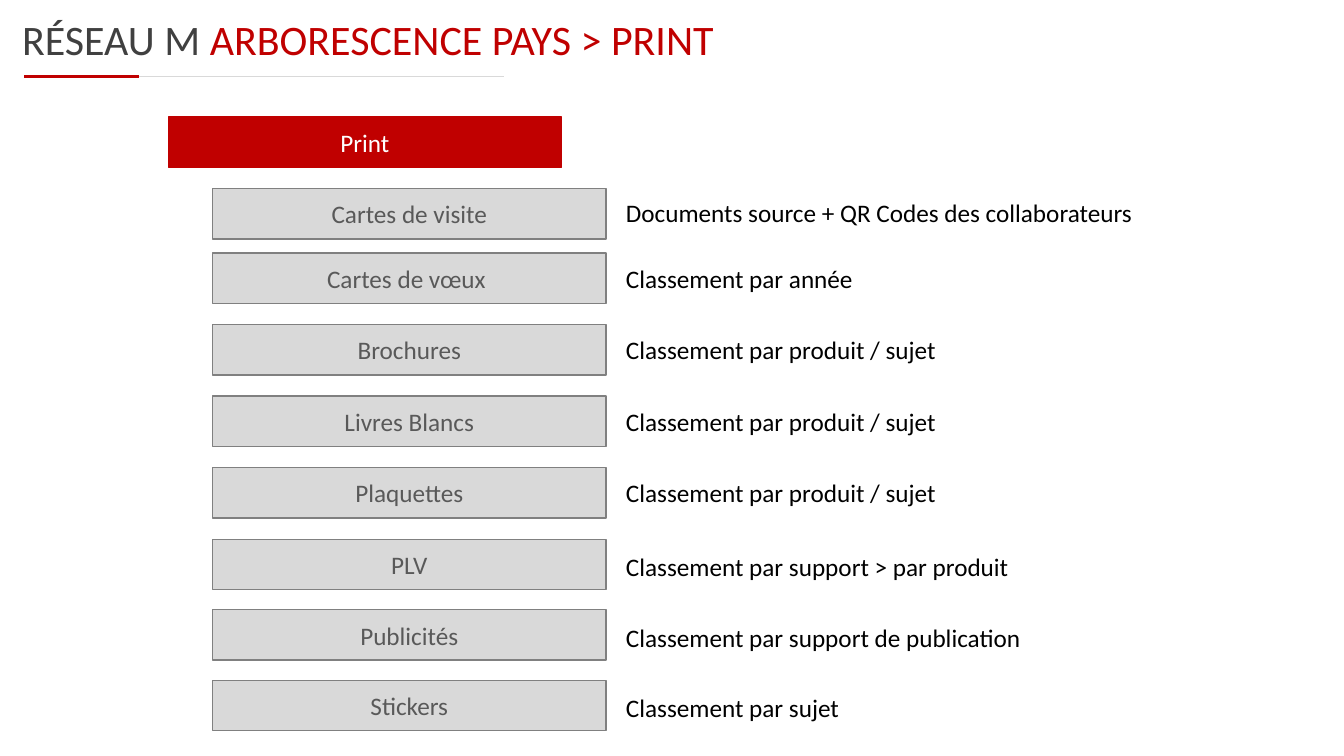
from pptx import Presentation
from pptx.dml.color import RGBColor
from pptx.enum.shapes import MSO_CONNECTOR, MSO_SHAPE
from pptx.enum.text import MSO_ANCHOR, MSO_AUTO_SIZE, PP_ALIGN
from pptx.oxml.ns import qn
from pptx.util import Pt
from lxml import etree

RECT = MSO_SHAPE.RECTANGLE
STRAIGHT = MSO_CONNECTOR.STRAIGHT
MIDDLE = MSO_ANCHOR.MIDDLE
CENTER = PP_ALIGN.CENTER
FIT_SHAPE = MSO_AUTO_SIZE.SHAPE_TO_FIT_TEXT

RED = RGBColor(0xC0, 0x00, 0x00)
WHITE = RGBColor(0xFF, 0xFF, 0xFF)
BLACK = RGBColor(0x00, 0x00, 0x00)
DARK = RGBColor(0x40, 0x40, 0x40)
TEXT_GREY = RGBColor(0x59, 0x59, 0x59)
EDGE_GREY = RGBColor(0x80, 0x80, 0x80)
LIGHT_GREY = RGBColor(0xD9, 0xD9, 0xD9)

PX = 9144  # 100 px to the inch


def style(font, size, color):
    font.name = "Calibri"
    font.size = Pt(size)
    font.color.rgb = color


def add_box(left, top, text, fill, edge, color):
    sp = s.shapes.add_shape(RECT, left * PX, top * PX, 390 * PX, 50 * PX)
    sp.shadow.inherit = False
    sp.fill.solid()
    sp.fill.fore_color.rgb = fill
    sp.line.color.rgb = edge
    sp.line.width = Pt(1)
    tf = sp.text_frame
    tf.text = text
    tf.vertical_anchor = MIDDLE
    p = tf.paragraphs[0]
    p.alignment = CENTER
    style(p.runs[0].font, 18, color)


prs = Presentation()
prs.slide_width, prs.slide_height = 1333 * PX, 750 * PX
s = prs.slides.add_slide(prs.slide_layouts[6])

# Rule under the title
for x1, x2, color, width in [(138, 500, LIGHT_GREY, 0.25), (24, 138, RED, 2.5)]:
    line = s.shapes.add_connector(STRAIGHT, x1 * PX, 76 * PX, x2 * PX, 76 * PX)
    line.line.color.rgb = color
    line.line.width = Pt(width)
    etree.SubElement(line._element.spPr, qn("a:effectLst"))

# Title
tb = s.shapes.add_textbox(12 * PX, 9 * PX, 1272 * PX, 84 * PX)
tb.text_frame.word_wrap = True
p = tb.text_frame.paragraphs[0]
for text, color in [("RÉSEAU M ", DARK), ("ARBORESCENCE PAYS > PRINT", RED)]:
    r = p.add_run()
    r.text = text
    style(r.font, 30, color)

# Root folder
add_box(167, 116, "Print", RED, RED, WHITE)

# Subfolders: box top, note top, folder name, filing note
BY_PRODUCT = "Classement par produit / sujet"
folders = [
    (187, 191, "Cartes de visite", "Documents source + QR Codes des collaborateurs"),
    (251, 256, "Cartes de vœux ", "Classement par année"),
    (322, 327, "Brochures", BY_PRODUCT),
    (393, 398, "Livres Blancs", BY_PRODUCT),
    (464, 469, "Plaquettes", BY_PRODUCT),
    (535, 542, "PLV", "Classement par support > par produit"),
    (605, 612, "Publicités", "Classement par support de publication"),
    (675, 682, "Stickers", "Classement par sujet"),
]
for box_top, note_top, name, note in folders:
    add_box(211, box_top, name, LIGHT_GREY, EDGE_GREY, TEXT_GREY)
    tb = s.shapes.add_textbox(611 * PX, note_top * PX, 673 * PX, 40 * PX)
    tf = tb.text_frame
    tf.word_wrap = True
    tf.auto_size = FIT_SHAPE
    tf.text = note
    style(tf.paragraphs[0].runs[0].font, 18, BLACK)

prs.save("out.pptx")
